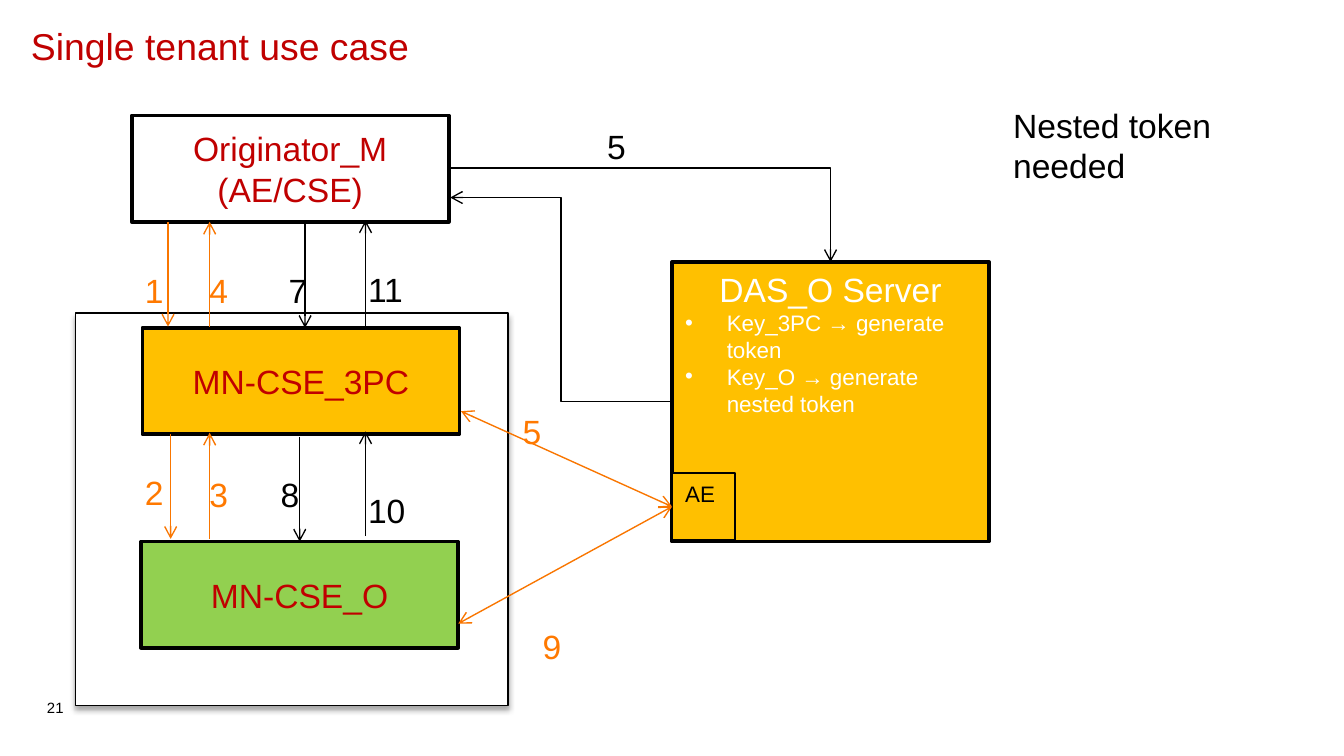
from dataclasses import dataclass

from lxml import etree
from pptx import Presentation
from pptx.dml.color import RGBColor
from pptx.enum.shapes import MSO_CONNECTOR, MSO_SHAPE
from pptx.enum.text import MSO_ANCHOR, MSO_AUTO_SIZE, PP_ALIGN
from pptx.oxml.ns import qn
from pptx.util import Inches, Pt

RECT = MSO_SHAPE.RECTANGLE
STRAIGHT, ELBOW = MSO_CONNECTOR.STRAIGHT, MSO_CONNECTOR.ELBOW
TOP, MIDDLE, BOTTOM = MSO_ANCHOR.TOP, MSO_ANCHOR.MIDDLE, MSO_ANCHOR.BOTTOM
LEFT, CENTER = PP_ALIGN.LEFT, PP_ALIGN.CENTER
FIXED = MSO_AUTO_SIZE.NONE
SIDE_TOP, SIDE_LEFT = 0, 1


@dataclass(frozen=True)
class Theme:
    font: str = "Arial"
    red: str = "C00000"
    black: str = "000000"
    white: str = "FFFFFF"
    amber: str = "FFC000"
    green: str = "92D050"
    orange: str = "F97600"
    digit: str = "FF7900"
    title: int = 20
    body: int = 18
    small: int = 12
    page: int = 8
    thick: float = 2
    thin: float = 0.75


THEME = Theme()
NODE_W, NODE_H = 2.36, 0.79


def style(para, size, color, align=LEFT):
    para.alignment = align
    for run in para.runs:
        font = run.font
        font.name, font.size = THEME.font, Pt(size)
        font.color.rgb = RGBColor.from_string(color)


def add_box(slide, box, fill, weight=THEME.thick):
    shape = slide.shapes.add_shape(RECT, *map(Inches, box))
    shape.shadow.inherit = False
    shape.fill.solid()
    shape.fill.fore_color.rgb = RGBColor.from_string(fill)
    shape.line.color.rgb = RGBColor.from_string(THEME.black)
    shape.line.width = Pt(weight)
    return shape


def add_node(slide, x, y, text, fill):
    node = add_box(slide, (x, y, NODE_W, NODE_H), fill)
    frame = node.text_frame
    frame.text = text
    frame.vertical_anchor = MIDDLE
    style(frame.paragraphs[0], THEME.body, THEME.red, CENTER)
    return node


def add_text(slide, box, text, size, color, wrap=True):
    frame = slide.shapes.add_textbox(*map(Inches, box)).text_frame
    frame.text = text
    frame.word_wrap = wrap
    style(frame.paragraphs[0], size, color)
    return frame


def add_label(slide, x, y, text, color):
    width = 0.34 if len(text) == 1 else 0.48
    add_text(slide, (x, y, width, 0.4), text, THEME.body, color, False)


def add_arrow(slide, start, end, color, kind=STRAIGHT, both=False):
    arrow = slide.shapes.add_connector(kind, *map(Inches, (*start, *end)))
    arrow.line.color.rgb = RGBColor.from_string(color)
    arrow.line.width = Pt(THEME.thin)
    line = arrow.line._get_or_add_ln()
    for tag in ("a:headEnd", "a:tailEnd") if both else ("a:tailEnd",):
        etree.SubElement(line, qn(tag), type="arrow")
    etree.SubElement(arrow._element.spPr, qn("a:effectLst"))
    return arrow


def add_shadow(shape):
    effects = shape._element.spPr.find(qn("a:effectLst"))
    shadow = etree.SubElement(
        effects, qn("a:outerShdw"), blurRad=str(Pt(3.1)), dist=str(Pt(1.8)),
        dir="5400000", algn="t", rotWithShape="0")
    color = etree.SubElement(shadow, qn("a:srgbClr"), val=THEME.black)
    etree.SubElement(color, qn("a:alpha"), val="35000")


def add_bullet(para):
    props = para._p.get_or_add_pPr()
    props.set("marL", str(Inches(0.31)))
    props.set("indent", str(Inches(-0.31)))
    etree.SubElement(props, qn("a:buFont"), typeface=THEME.font)
    etree.SubElement(props, qn("a:buChar"), char="•")


def add_title(slide, box, text):
    title = slide.shapes.title
    title.left, title.top, title.width, title.height = map(Inches, box)
    frame = title.text_frame
    frame.text = text
    frame.auto_size, frame.vertical_anchor = FIXED, TOP
    frame.margin_left = frame.margin_right = 0
    frame.margin_top = frame.margin_bottom = 0
    frame.paragraphs[0].line_spacing = 0.9
    style(frame.paragraphs[0], THEME.title, THEME.red)


def add_page(slide, box, number):
    frame = add_text(slide, box, number, THEME.page, THEME.black)
    frame.vertical_anchor = BOTTOM
    frame.margin_left = Inches(0.01)
    frame.margin_right = frame.margin_top = frame.margin_bottom = 0
    para = frame.paragraphs[0]
    para.line_spacing, para.space_after = 0.85, Pt(12)


def add_chain(slide, x, y):
    """Stack the three nodes with their numbered messages."""
    add_shadow(add_box(slide, (x, y + 1.47, 3.22, 2.92), THEME.white, THEME.thin))
    add_node(slide, x + 0.5, y + 1.58, "MN-CSE_3PC", THEME.amber)
    add_node(slide, x + 0.42, y, "Originator_M (AE/CSE)", THEME.white)
    owner = add_node(slide, x + 0.49, y + 3.17, "MN-CSE_O", THEME.green)

    warm, dark = (THEME.orange, THEME.digit), (THEME.black, THEME.black)
    # number, label x and y, arrow x, arrow start and end y, colours
    steps = [
        ("1", 0.42, 1.1, 0.69, 0.79, 1.57, warm),
        ("4", 0.9, 1.1, 1.0, 1.57, 0.79, warm),
        ("7", 1.49, 1.1, 1.71, 0.79, 1.58, dark),
        ("11", 2.08, 1.09, 2.16, 1.57, 0.78, dark),
        ("2", 0.42, 2.6, 0.71, 2.37, 3.15, warm),
        ("3", 0.9, 2.62, 1.0, 3.15, 2.36, warm),
        ("8", 1.43, 2.62, 1.67, 2.39, 3.17, dark),
        ("10", 2.08, 2.74, 2.16, 3.13, 2.35, dark),
    ]
    for number, left, top, mid, start, end, (line, ink) in steps:
        arrow = add_arrow(slide, (x + mid, y + start), (x + mid, y + end), line)
        if number == "8":
            arrow.end_connect(owner, SIDE_TOP)
        add_label(slide, x + left, y + top, number, ink)


def add_server(slide, x, y):
    """Draw the server and return its embedded AE box."""
    frame = add_box(slide, (x, y, NODE_W, 2.08), THEME.amber).text_frame
    frame.text = ("DAS_O Server\nKey_3PC → generate token\n"
                  "Key_O → generate nested token")
    frame.vertical_anchor = TOP
    head, *keys = frame.paragraphs
    style(head, THEME.body, THEME.white, CENTER)
    for key in keys:
        style(key, THEME.small, THEME.white)
        add_bullet(key)

    agent = add_box(slide, (x, y + 1.57, 0.47, 0.5), THEME.amber, THEME.thin)
    agent.text_frame.text = "AE"
    agent.text_frame.vertical_anchor = TOP
    style(agent.text_frame.paragraphs[0], THEME.small, THEME.black)
    return agent


def add_links(slide, x, y, agent):
    """Link the chain, whose right edge is at x, with the server."""
    port = (x + 1.65, y + 2.91)
    for start in ((x + 0.08, y + 2.2), (x + 0.06, y + 3.78)):
        link = add_arrow(slide, start, port, THEME.orange, both=True)
        link.end_connect(agent, SIDE_LEFT)
    ask = add_arrow(slide, (x, y + 0.39), (x + 2.83, y + 1.09), THEME.black, ELBOW)
    ask._element.spPr.find(qn("a:prstGeom")).set("prst", "bentConnector2")
    add_arrow(slide, (x + 1.65, y + 2.13), (x, y + 0.61), THEME.black, ELBOW)
    add_label(slide, x + 1.07, y + 0.03, "5", THEME.black)
    add_label(slide, x + 0.44, y + 2.15, "5", THEME.digit)
    add_label(slide, x + 0.59, y + 3.75, "9", THEME.digit)


def main():
    deck = Presentation()
    deck.slide_width = Inches(10)
    deck.slide_height = deck.slide_width * 9 // 16
    slide = deck.slides.add_slide(deck.slide_layouts[5])
    add_title(slide, (0.23, 0.21, 7.37, 0.65), "Single tenant use case")
    add_page(slide, (0.34, 4.96, 0.3, 0.37), "21")
    add_chain(slide, 0.56, 0.86)
    agent = add_server(slide, 5, 1.95)
    add_links(slide, 3.35, 0.86, agent)
    add_text(slide, (7.44, 0.73, 2.13, 0.71), "Nested token needed",
             THEME.body, THEME.black)
    deck.save("out.pptx")


if __name__ == "__main__":
    main()
